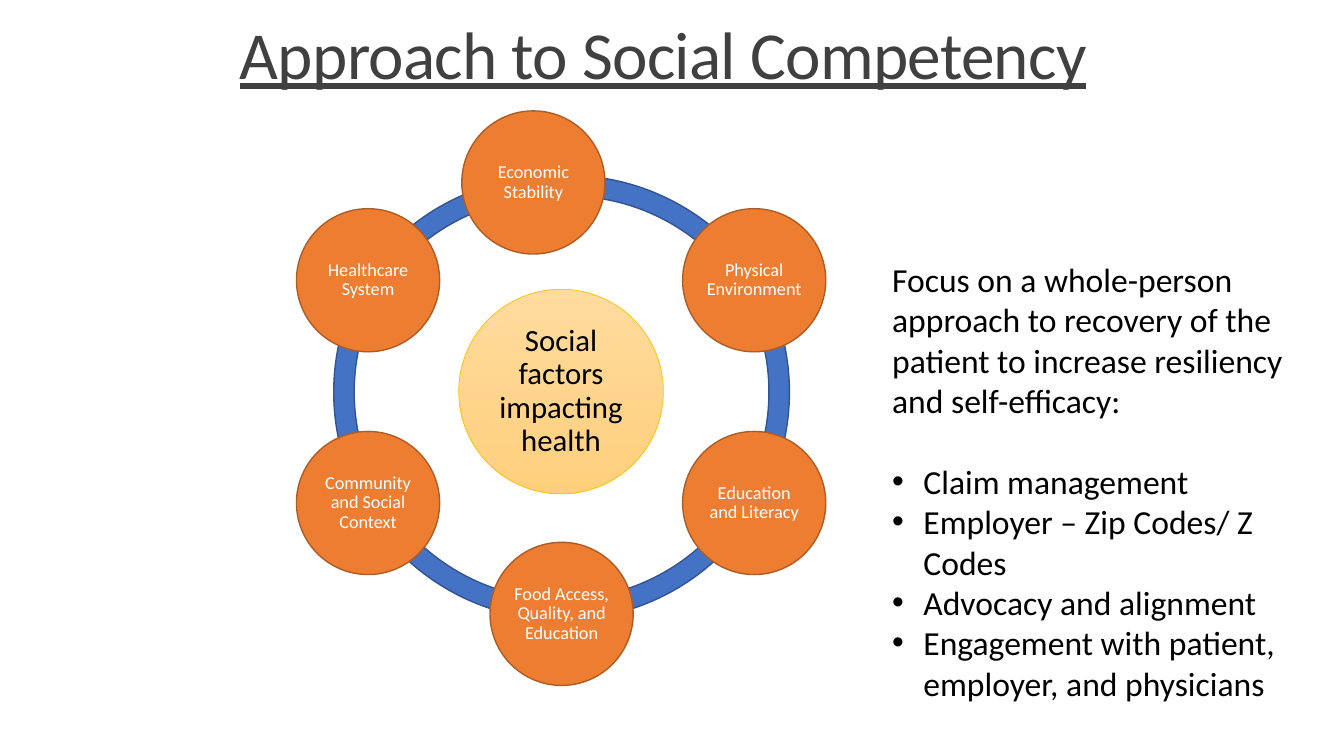
from math import cos, radians, sin

from lxml.etree import SubElement
from pptx import Presentation
from pptx.dml.color import RGBColor
from pptx.enum.shapes import MSO_SHAPE as Preset
from pptx.enum.text import MSO_ANCHOR as Anchor, PP_ALIGN as Align
from pptx.oxml.ns import qn
from pptx.util import Emu, Pt

PX = 9144
FONT = "Calibri"
RING_SIZE = 452
HUB_SIZE = 203
FACTOR_SIZE = 142
FACTOR_ORBIT = 221
CENTER = (556.5, 388.5)

RING_ARCS = [
    (323, 175, 213.9, 265),
    (331, 163, 150, 210),
    (331, 163, 90, 150),
    (331, 163, 30, 90),
    (331, 163, 330, 30),
    (337, 174, 261.2, 326.7),
]
FACTORS = [
    ("Economic Stability", -90, (-28, 13)),
    ("Physical Environment", -30, (0, 0)),
    ("Education and Literacy", 30, (0, 0)),
    ("Food Access, Quality, and Education", 90, (0, 0)),
    ("Community and Social Context", 150, (0, 0)),
    ("Healthcare System", 210, (0, 0)),
]
INTRO = (
    "Focus on a whole-person approach to recovery of the patient "
    "to increase resiliency and self-efficacy:"
)
ACTIONS = [
    "Claim management",
    "Employer – Zip Codes/ Z Codes",
    "Advocacy and alignment",
    "Engagement with patient, employer, and physicians",
]


def px(value):
    return Emu(round(value) * PX)


def color(value):
    return RGBColor.from_string(value)


def add_run(paragraph, text, size, text_color):
    run = paragraph.add_run()
    run.text = text
    run.font.name = FONT
    run.font.size = Pt(size)
    run.font.color.rgb = color(text_color)
    return run


def add_outlined(slide, preset, left, top, size, line, width):
    shape = slide.shapes.add_shape(preset, px(left), px(top), px(size), px(size))
    shape.shadow.inherit = False
    shape.line.color.rgb = color(line)
    shape.line.width = Pt(width)
    return shape


def add_arc(slide, left, top, start, end):
    shape = add_outlined(slide, Preset.BLOCK_ARC, left, top, RING_SIZE, "325491", 1)
    shape.fill.solid()
    shape.fill.fore_color.rgb = color("4472C4")
    for index, value in enumerate((start * 0.6, end * 0.6, 0.045)):
        shape.adjustments[index] = value


def add_circle(slide, center, size, line, width, text, points, text_color, inset):
    left, top = (middle - size / 2 for middle in center)
    shape = add_outlined(slide, Preset.OVAL, left, top, size, line, width)
    frame = shape.text_frame
    frame.word_wrap = True
    frame.vertical_anchor = Anchor.MIDDLE
    frame.margin_left = frame.margin_right = px(inset)
    frame.margin_top = frame.margin_bottom = px(inset)
    paragraph = frame.paragraphs[0]
    paragraph.alignment = Align.CENTER
    paragraph.line_spacing = 0.9
    add_run(paragraph, text, points, text_color)
    return shape


def add_hub(slide):
    hub = add_circle(slide, CENTER, HUB_SIZE, "FFC000", 0.5,
                     "Social factors impacting health", 22, "000000", 3)
    hub.fill.gradient()
    hub.fill.gradient_angle = 270
    for stop, value in zip(hub.fill.gradient_stops, ("FFDB9E", "FFD07C")):
        stop.color.rgb = color(value)


def add_factor(slide, text, angle, shift):
    center = (
        CENTER[0] + FACTOR_ORBIT * cos(radians(angle)) + shift[0],
        CENTER[1] + FACTOR_ORBIT * sin(radians(angle)) + shift[1],
    )
    circle = add_circle(slide, center, FACTOR_SIZE, "AF5C24", 1, text, 13, "FFFFFF", 2)
    circle.fill.solid()
    circle.fill.fore_color.rgb = color("ED7D31")


def add_text_box(slide, left, top, width, height):
    box = slide.shapes.add_textbox(px(left), px(top), px(width), px(height))
    box.text_frame.word_wrap = True
    return box.text_frame


def add_bullet(frame, text):
    paragraph = frame.add_paragraph()
    properties = paragraph._p.get_or_add_pPr()
    properties.set("marL", str(px(31)))
    properties.set("indent", str(px(-31)))
    SubElement(properties, qn("a:buFont")).set("typeface", "Arial")
    SubElement(properties, qn("a:buChar")).set("char", "•")
    add_run(paragraph, text, 24, "000000")


def add_approach(slide):
    frame = add_text_box(slide, 875, 252, 425, 454)
    intro = frame.paragraphs[0]
    intro.space_after = Pt(29)
    add_run(intro, INTRO, 24, "000000")
    for action in ACTIONS:
        add_bullet(frame, action)


def add_title(slide):
    frame = add_text_box(slide, 228, 0, 877, 97)
    frame.vertical_anchor = Anchor.BOTTOM
    paragraph = frame.paragraphs[0]
    paragraph.line_spacing = 0.85
    run = add_run(paragraph, "Approach to Social Competency", 48, "404040")
    run.font.underline = True
    run._r.get_or_add_rPr().set("spc", "-50")


def main():
    presentation = Presentation()
    presentation.slide_width = px(1333)
    presentation.slide_height = px(750)
    slide = presentation.slides.add_slide(presentation.slide_layouts[6])
    for arc in RING_ARCS:
        add_arc(slide, *arc)
    add_hub(slide)
    for factor in FACTORS:
        add_factor(slide, *factor)
    add_approach(slide)
    add_title(slide)
    presentation.save("out.pptx")


if __name__ == "__main__":
    main()
